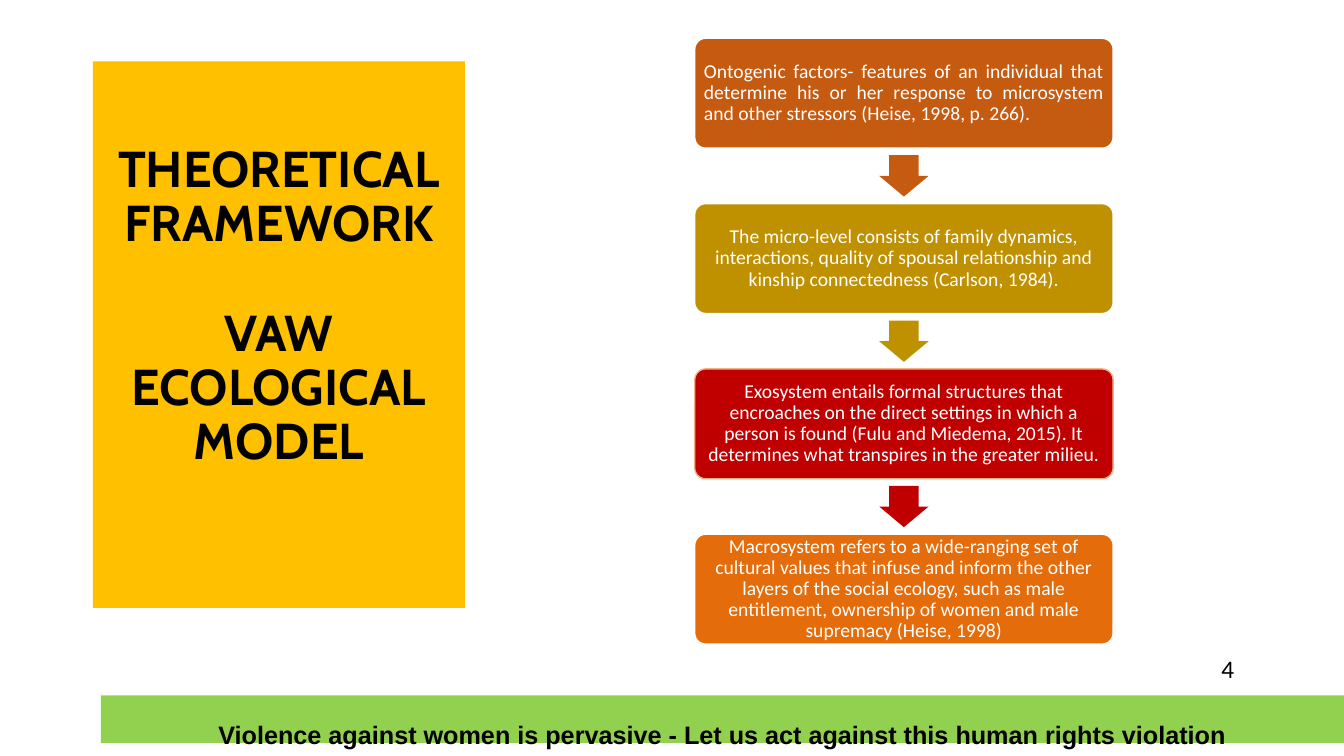
from dataclasses import dataclass

from pptx import Presentation
from pptx.dml.color import RGBColor
from pptx.enum.shapes import MSO_SHAPE
from pptx.enum.text import MSO_ANCHOR, MSO_AUTO_SIZE, PP_ALIGN
from pptx.util import Emu, Pt

PX = 9144  # 100 px to the inch


@dataclass(frozen=True)
class Theme:
    title_fill: str = "FFC000"
    footer_fill: str = "92D050"
    ontogenic: str = "C55A11"
    micro: str = "BF9000"
    exo: str = "C00000"
    macro: str = "E46C0A"
    exo_line: str = "F4B183"
    white: str = "FFFFFF"
    black: str = "000000"
    title_size: int = 36
    body_size: int = 14
    small_size: int = 18


T = Theme()


def add_block(kind, box, fill, line=None):
    shape = s.shapes.add_shape(kind, *[Emu(v * PX) for v in box])
    shape.shadow.inherit = False
    shape.fill.solid()
    shape.fill.fore_color.rgb = RGBColor.from_string(fill)
    if line:
        shape.line.color.rgb = RGBColor.from_string(line)
        shape.line.width = Pt(1)
    else:
        shape.line.fill.background()
    return shape


def write(shape, text, font, size, color, bold=False, align=PP_ALIGN.CENTER,
          spacing=1.0, anchor=MSO_ANCHOR.MIDDLE, insets=(10, 5, 10, 5)):
    tf = shape.text_frame
    tf.text = text
    tf.word_wrap = True
    tf.auto_size = MSO_AUTO_SIZE.NONE
    tf.vertical_anchor = anchor
    (tf.margin_left, tf.margin_top,
     tf.margin_right, tf.margin_bottom) = [Emu(v * PX) for v in insets]
    for p in tf.paragraphs:
        p.alignment = align
        p.line_spacing = spacing
        for r in p.runs:
            r.font.name = font
            r.font.size = Pt(size)
            r.font.bold = bold
            r.font.color.rgb = RGBColor.from_string(color)
    return tf


prs = Presentation()
prs.slide_width, prs.slide_height = Emu(1333 * PX), Emu(750 * PX)
s = prs.slides.add_slide(prs.slide_layouts[5])

# Title panel
title = s.shapes.title
title.left, title.top, title.width, title.height = [
    Emu(v * PX) for v in (92, 61, 369, 542)]
title.fill.solid()
title.fill.fore_color.rgb = RGBColor.from_string(T.title_fill)
tf = write(title, "THEORETICAL FRAMEWORK\nVAW ECOLOGICAL MODEL", "Cabin",
           T.title_size, T.black, bold=True, spacing=0.9,
           insets=(10, 5, 10, 59))
tf.paragraphs[0].space_before = Pt(0)
tf.paragraphs[1].space_before = Pt(39)

# Ecological levels, each followed by an arrow to the next
levels = [
    ("Ontogenic factors- features of an individual that determine his or her "
     "response to microsystem and other stressors (Heise, 1998, p. 266).",
     T.ontogenic, T.white, PP_ALIGN.JUSTIFY),
    ("The micro-level consists of family dynamics, interactions, quality of "
     "spousal relationship and kinship connectedness (Carlson, 1984).",
     T.micro, T.white, PP_ALIGN.CENTER),
    ("Exosystem entails formal structures that encroaches on the direct "
     "settings in which a person is found (Fulu and Miedema, 2015). It "
     "determines what transpires in the greater milieu.",
     T.exo, T.exo_line, PP_ALIGN.CENTER),
    ("Macrosystem refers to a wide-ranging set of cultural values that infuse "
     "and inform the other layers of the social ecology, such as male "
     "entitlement, ownership of women and male supremacy (Heise, 1998)",
     T.macro, T.white, PP_ALIGN.CENTER),
]
for i, (text, fill, line, align) in enumerate(levels):
    top = 38 + 164 * i
    box = add_block(MSO_SHAPE.ROUNDED_RECTANGLE, (689, top, 415, 109), fill, line)
    box.adjustments[0] = 0.1
    write(box, text, "Calibri", T.body_size, T.white, align=align,
          spacing=0.9, insets=(6, 6, 6, 6))
    if i < len(levels) - 1:
        arrow = add_block(MSO_SHAPE.DOWN_ARROW, (872, top + 116, 49, 41), fill)
        arrow.adjustments[0] = 0.6
        arrow.adjustments[1] = 0.5

# Footer band
footer = add_block(MSO_SHAPE.RECTANGLE, (100, 690, 1233, 47), T.footer_fill)
write(footer, "Violence against women is pervasive - Let us act against this "
      "human rights violation", "Arial", T.small_size, T.black, bold=True,
      anchor=MSO_ANCHOR.TOP, insets=(10, 24, 10, 0))

# Page number
number = s.shapes.add_textbox(*[Emu(v * PX) for v in (1150, 643, 84, 40)])
write(number, "4", "Calibri", T.small_size, T.black, align=PP_ALIGN.RIGHT)

prs.save("out.pptx")
